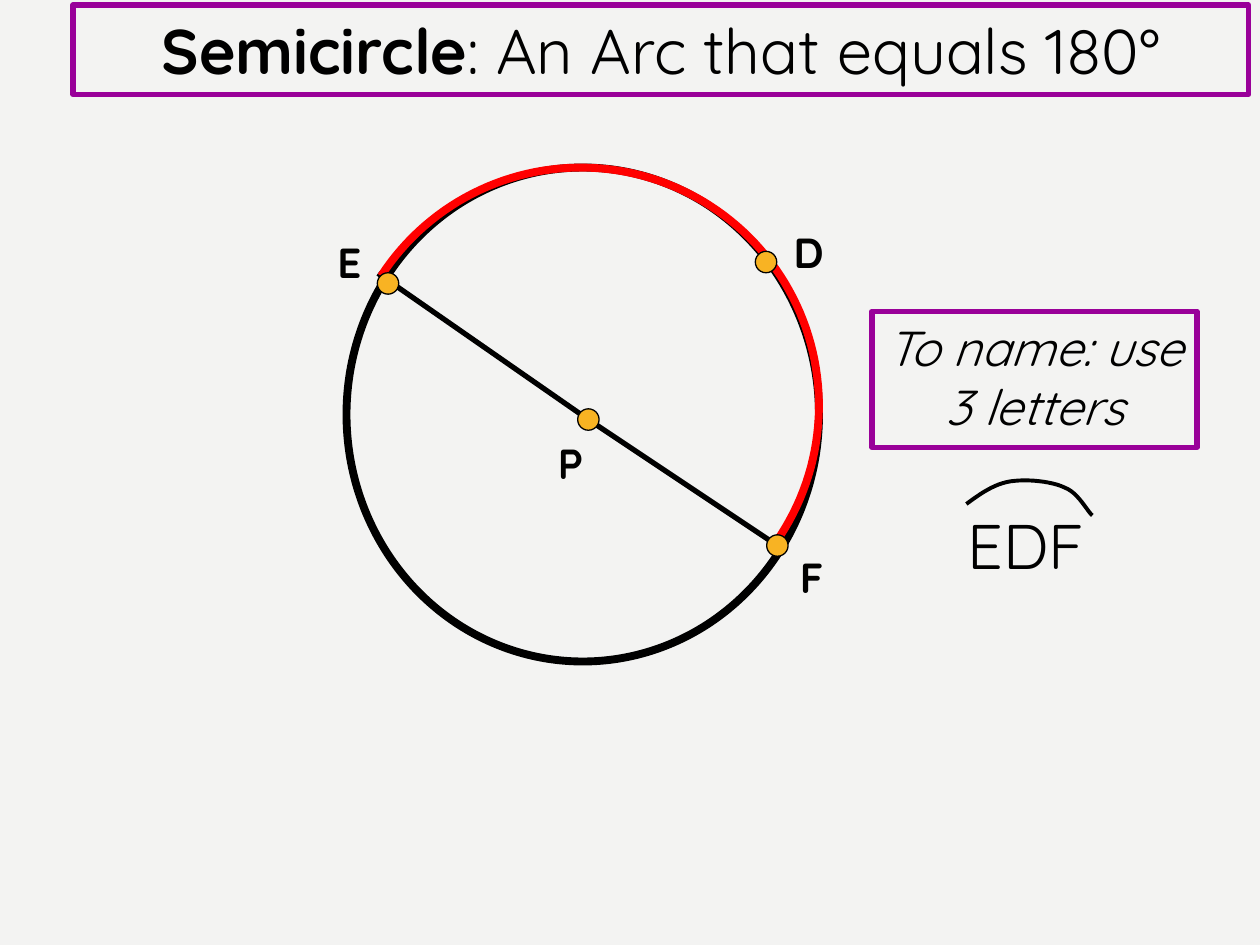
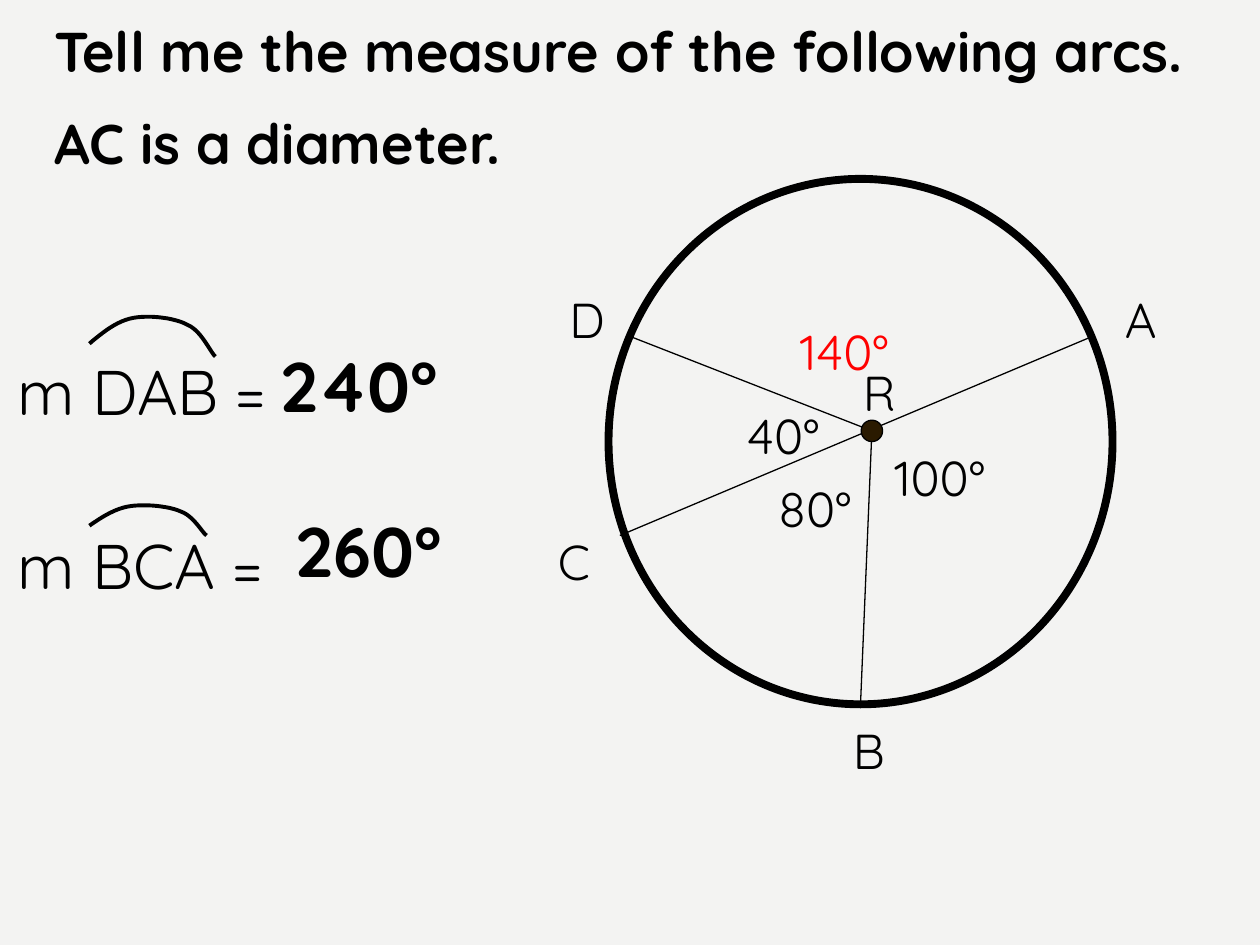
import math

import pptx
import pptx.dml.color
import pptx.enum.shapes
import pptx.enum.text
import pptx.oxml
import pptx.oxml.ns
import pptx.util

Inches = pptx.util.Inches
SHAPE = pptx.enum.shapes.MSO_SHAPE
ALIGN = pptx.enum.text.PP_ALIGN

FONT = "Quicksand"
BACKGROUND, BLACK, RED = "F3F3F2", "000000", "FF0000"
PURPLE, GOLD, BROWN = "990099", "F8B323", "2A1A00"
DOT = 0.17
PARAGRAPH_GAP = 14
# Bezier points of the arc symbol over letters, as shares of its width and height
ARC_SYMBOL = [(0, 0.69), (0.11, 0.41), (0.22, 0.14), (0.35, 0.07), (0.48, 0),
              (0.68, 0.07), (0.78, 0.24), (0.89, 0.38), (0.96, 0.9), (1, 1)]


def rgb(value):
    return pptx.dml.color.RGBColor.from_string(value)


def set_line(shape, color, width):
    shape.line.color.rgb = rgb(color)
    shape.line.width = pptx.util.Pt(width)


def write(shape, paragraphs, size, color=BLACK, align=ALIGN.LEFT):
    """Fill a shape with paragraphs, each a list of (text, font formats)."""
    tf = shape.text_frame
    frame_format = {"word_wrap": True,
                    "auto_size": pptx.enum.text.MSO_AUTO_SIZE.NONE,
                    "vertical_anchor": pptx.enum.text.MSO_ANCHOR.TOP}
    for name, value in frame_format.items():
        setattr(tf, name, value)
    for i, runs in enumerate(paragraphs):
        p = tf.add_paragraph() if i else tf.paragraphs[0]
        p.alignment = align
        if i:
            p.space_before = pptx.util.Pt(PARAGRAPH_GAP)
        for text, formats in runs:
            r = p.add_run()
            r.text = text
            r.font.color.rgb = rgb(color)
            font_format = {"name": FONT, "size": pptx.util.Pt(size), **formats}
            for name, value in font_format.items():
                setattr(r.font, name, value)


def add_text(s, text, left, top, width, height, size, color=BLACK, **formats):
    box = s.shapes.add_textbox(*map(Inches, (left, top, width, height)))
    write(box, [[(text, formats)]], size, color)


def add_title(s, box, paragraphs, size, align=ALIGN.LEFT):
    title = s.shapes.title
    for name, value in zip(("left", "top", "width", "height"), box):
        setattr(title, name, Inches(value))
    write(title, paragraphs, size, align=align)
    return title


def add_shape(s, kind, box, line_width, line_color=BLACK, fill=None):
    shape = s.shapes.add_shape(kind, *map(Inches, box))
    shape.shadow.inherit = False
    if fill:
        shape.fill.solid()
        shape.fill.fore_color.rgb = rgb(fill)
    else:
        shape.fill.background()
    set_line(shape, line_color, line_width)
    return shape


def add_dot(s, x, y, fill):
    """Draw a point centred on x, y."""
    box = (x - DOT / 2, y - DOT / 2, DOT, DOT)
    add_shape(s, SHAPE.OVAL, box, 0.75, fill=fill)


def add_segment(s, start, end, width):
    line = s.shapes.add_connector(pptx.enum.shapes.MSO_CONNECTOR.STRAIGHT,
                                  *map(Inches, (*start, *end)))
    set_line(line, BLACK, width)
    pptx.oxml.ns.qn("a:effectLst")
    line._element.spPr.append(pptx.oxml.parse_xml(
        f'<a:effectLst {pptx.oxml.ns.nsdecls("a")}/>'))


def add_curve(s, points, color, width):
    """Draw an open curve through closely spaced points."""
    points = [(Inches(x), Inches(y)) for x, y in points]
    builder = s.shapes.build_freeform(*points[0])
    builder.add_line_segments(points[1:], close=False)
    curve = builder.convert_to_shape()
    curve.shadow.inherit = False
    curve.fill.background()
    set_line(curve, color, width)


def add_arc_symbol(s, left, top, width, height, steps=12):
    points = [ARC_SYMBOL[0]]
    for i in range(0, len(ARC_SYMBOL) - 1, 3):
        controls = ARC_SYMBOL[i:i + 4]
        for step in range(1, steps + 1):
            t = step / steps
            weights = [math.comb(3, k) * (1 - t) ** (3 - k) * t ** k
                       for k in range(4)]
            points.append([sum(w * c[axis] for w, c in zip(weights, controls))
                           for axis in (0, 1)])
    placed = [(left + x * width, top + y * height) for x, y in points]
    add_curve(s, placed, BLACK, 2.25)


def semicircle_diagram(s, left, top, width, height):
    def at(x, y):
        return left + x, top + y

    # name: (point, label corner)
    marks = {"P": ((1.92, 2), (1.58, 2.09)), "D": ((3.33, 0.75), (3.45, 0.42)),
             "E": ((0.33, 0.92), (-0.17, 0.5)), "F": ((3.42, 3), (3.5, 3))}
    add_shape(s, SHAPE.OVAL, (left, top, width, height), 4.5)
    center = at(*marks["P"][0])
    for end in ((0.25, 0.84), (3.42, 3)):
        add_segment(s, center, at(*end), 3)

    radius, (x, y) = 1.89, at(1.86, 1.89)
    angles = [math.radians(a) for a in range(213, 396, 2)]
    add_curve(s, [(x + radius * math.cos(a), y + radius * math.sin(a))
                  for a in angles], RED, 4.5)
    for name, (point, corner) in marks.items():
        add_dot(s, *at(*point), GOLD)
        add_text(s, name, *at(*corner), 0.5, 0.5, 24, bold=True)


def naming_rule(s, left, top, width, height):
    note = add_shape(s, SHAPE.RECTANGLE, (left, top, width, height), 3, PURPLE)
    write(note, [[("To name: use 3 letters", {"italic": True})]], 28,
          align=ALIGN.CENTER)
    add_text(s, "EDF", left + 0.66, top + 1.5, 1.58, 0.7, 36)
    add_arc_symbol(s, left + 0.75, top + 1.33, 1, 0.29)


def central_angles(s, left, top, width, height):
    def at(x, y):
        return left + x, top + y

    add_shape(s, SHAPE.OVAL, (left, top, width, height), 4.5)
    center = at(2.09, 2)
    add_segment(s, at(0.09, 2.83), at(3.84, 1.25), 0.75)
    for end in ((2, 4.16), (0.17, 1.25)):
        add_segment(s, center, at(*end), 0.75)
    add_dot(s, *center, BROWN)

    angles = [("80°", 1.25, 2.33, BLACK), ("100°", 2.17, 2.08, BLACK),
              ("40°", 1, 1.75, BLACK), ("140°", 1.42, 1.08, RED)]
    for text, x, y, color in angles:
        add_text(s, text, *at(x, y), 1.33, 0.57, 28, color)
    points = [("A", 4, 0.83), ("B", 1.84, 4.25), ("C", -0.5, 2.75),
              ("D", -0.41, 0.83), ("R", 1.92, 1.41)]
    for text, x, y in points:
        add_text(s, text, *at(x, y), 0.67, 0.57, 28)


def arc_measure(s, left, top, letters, symbol, answer, answer_offset):
    """Write an equation; symbol holds the rise, width and height of its arc."""
    rise, width, height = symbol
    add_text(s, f"m {letters} =", left, top, 2.42, 0.7, 36)
    add_arc_symbol(s, left + 0.67, top - rise, width, height)
    x, y = answer_offset
    add_text(s, answer, left + x, top + y, 1.92, 0.77, 40, bold=True)


def semicircle_slide(s):
    title = add_title(s, (0.58, 0.04, 9.33, 0.71),
                      [[("Semicircle", {"bold": True}),
                        (": An Arc that equals 180°", {"bold": False})]],
                      36, ALIGN.CENTER)
    set_line(title, PURPLE, 3)
    semicircle_diagram(s, 2.75, 1.33, 3.75, 3.92)
    naming_rule(s, 6.92, 2.47, 2.58, 1.08)


def arc_measures_slide(s):
    bold = {"bold": True}
    add_title(s, (0.33, 0.08, 9.17, 1.45),
              [[("Tell me the measure of the following arcs.", bold)],
               [("AC is a diameter.", bold)]], 32)
    central_angles(s, 4.83, 1.42, 4, 4.17)
    arc_measure(s, 0.04, 2.75, "DAB", (0.25, 1, 0.33), "240°", (2.09, -0.08))
    arc_measure(s, 0.04, 4.13, "BCA", (0.13, 0.93, 0.25), "260°", (2.21, -0.15))


def main():
    prs = pptx.Presentation()
    prs.slide_width, prs.slide_height = Inches(10), Inches(7.5)
    fill = prs.slide_master.background.fill
    fill.solid()
    fill.fore_color.rgb = rgb(BACKGROUND)
    title_only = prs.slide_layouts[5]
    for build in (semicircle_slide, arc_measures_slide):
        build(prs.slides.add_slide(title_only))
    prs.save("out.pptx")


if __name__ == "__main__":
    main()
